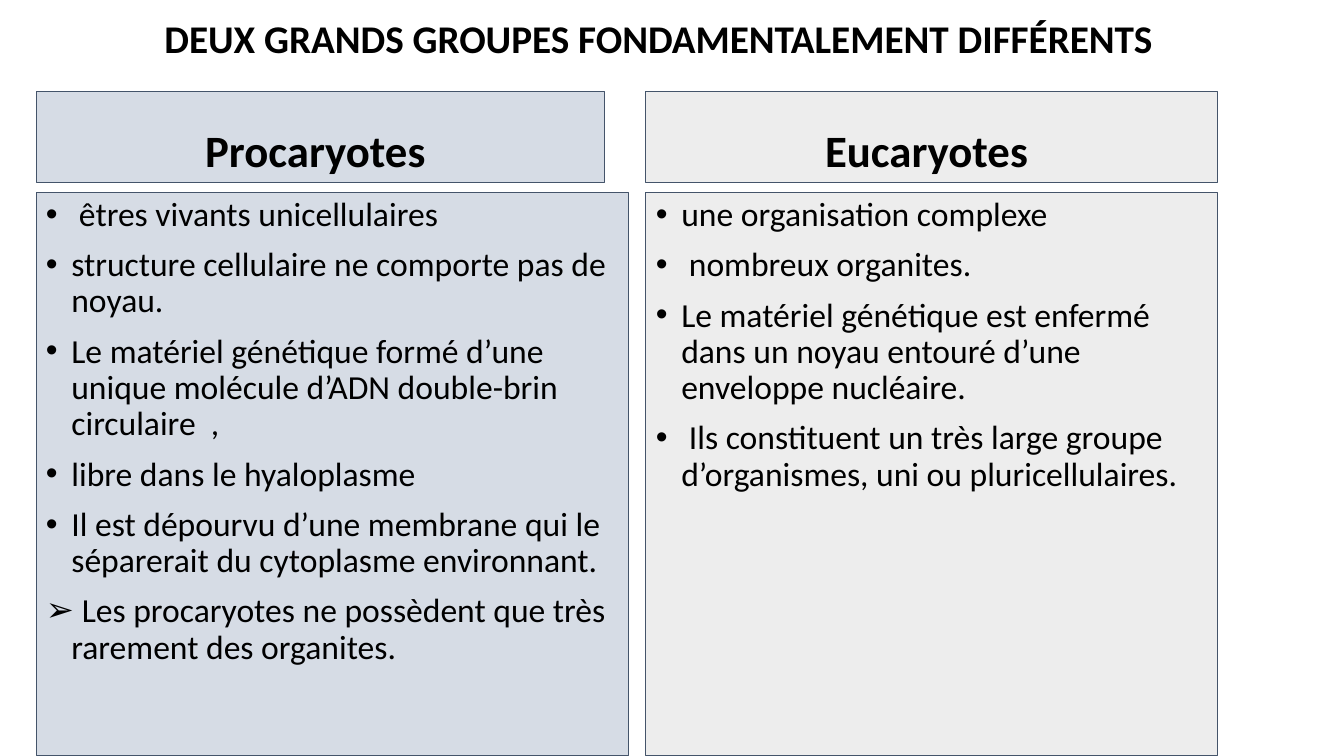
from lxml.etree import SubElement
from pptx import Presentation
from pptx.dml.color import RGBColor
from pptx.enum.shapes import MSO_SHAPE as Shape
from pptx.enum.text import MSO_ANCHOR as Anchor, MSO_AUTO_SIZE as AutoSize, PP_ALIGN as Align
from pptx.oxml.ns import qn
from pptx.util import Cm, Pt

TITLE = "DEUX GRANDS GROUPES FONDAMENTALEMENT DIFFÉRENTS"
HEADER_TOP, HEADER_HEIGHT = 2.31, 2.29
BODY_TOP, BODY_HEIGHT = 4.85, 14.2

# name, fill, left, header width, body width, (bullet, statement) pairs
GROUPS = [
    ("Procaryotes ", "D6DCE5", 0.91, 14.33, 14.94, [
        ("•", " êtres vivants unicellulaires"),
        ("•", "structure cellulaire ne comporte pas de noyau."),
        ("•", "Le matériel génétique formé d’une unique molécule d’ADN double-brin circulaire  ,"),
        ("•", "libre dans le hyaloplasme"),
        ("•", "Il est dépourvu d’une membrane qui le séparerait du cytoplasme environnant."),
        ("➢", " Les procaryotes ne possèdent que très rarement des organites."),
    ]),
    ("Eucaryotes ", "EDEDED", 16.28, 14.4, 14.4, [
        ("•", "une organisation complexe"),
        ("•", " nombreux organites."),
        ("•", "Le matériel génétique est enfermé dans un noyau entouré d’une enveloppe nucléaire."),
        ("•", " Ils constituent un très large groupe d’organismes, uni ou pluricellulaires."),
    ]),
]


def color(hex_code):
    return RGBColor.from_string(hex_code)


def apply(target, **values):
    for name, value in values.items():
        setattr(target, name, value)


class ComparisonSlide:
    FONT = "Calibri"
    INK = "000000"
    BORDER = "44546A"
    INDENT = Cm(0.64)

    def __init__(self, presentation):
        self.slide = presentation.slides.add_slide(presentation.slide_layouts[5])

    def add_text(self, paragraph, text, size, bold=False, align=Align.LEFT):
        apply(paragraph, alignment=align, line_spacing=0.9)
        run = paragraph.add_run()
        run.text = text
        apply(run.font, name=self.FONT, size=Pt(size), bold=bold)
        run.font.color.rgb = color(self.INK)

    def title(self, text, left, top, width, height):
        title = self.slide.shapes.title
        apply(title, left=Cm(left), top=Cm(top), width=Cm(width), height=Cm(height))
        apply(title.text_frame, auto_size=AutoSize.NONE, vertical_anchor=Anchor.MIDDLE)
        self.add_text(title.text_frame.paragraphs[0], text, 28, True, Align.CENTER)

    def panel(self, fill, left, top, width, height, anchor):
        """Draw a bordered rectangle and return its text frame."""
        panel = self.slide.shapes.add_shape(
            Shape.RECTANGLE, Cm(left), Cm(top), Cm(width), Cm(height))
        panel.shadow.inherit = False
        panel.fill.solid()
        panel.fill.fore_color.rgb = color(fill)
        panel.line.color.rgb = color(self.BORDER)
        panel.line.width = Pt(0.75)
        apply(panel.text_frame, word_wrap=True, vertical_anchor=anchor)
        return panel.text_frame

    def header(self, name, *box):
        frame = self.panel(*box, Anchor.BOTTOM)
        self.add_text(frame.paragraphs[0], name, 32, True, Align.CENTER)

    def bullet_list(self, statements, *box):
        frame = self.panel(*box, Anchor.TOP)
        for index, (bullet, statement) in enumerate(statements):
            paragraph = frame.add_paragraph() if index else frame.paragraphs[0]
            properties = paragraph._p.get_or_add_pPr()
            properties.set("marL", str(self.INDENT))
            properties.set("indent", str(-self.INDENT))
            SubElement(properties, qn("a:buFont"), typeface="Arial")
            SubElement(properties, qn("a:buChar"), char=bullet)
            if index:
                paragraph.space_before = Pt(10)
            self.add_text(paragraph, statement, 24)


def main():
    presentation = Presentation()
    apply(presentation, slide_width=Cm(33.87), slide_height=Cm(19.05))
    comparison = ComparisonSlide(presentation)
    comparison.title(TITLE, 1.35, 0.36, 30.48, 1.35)
    for name, fill, left, header_width, body_width, statements in GROUPS:
        comparison.header(name, fill, left, HEADER_TOP, header_width, HEADER_HEIGHT)
        comparison.bullet_list(statements, fill, left, BODY_TOP, body_width, BODY_HEIGHT)
    presentation.save("out.pptx")


if __name__ == "__main__":
    main()
